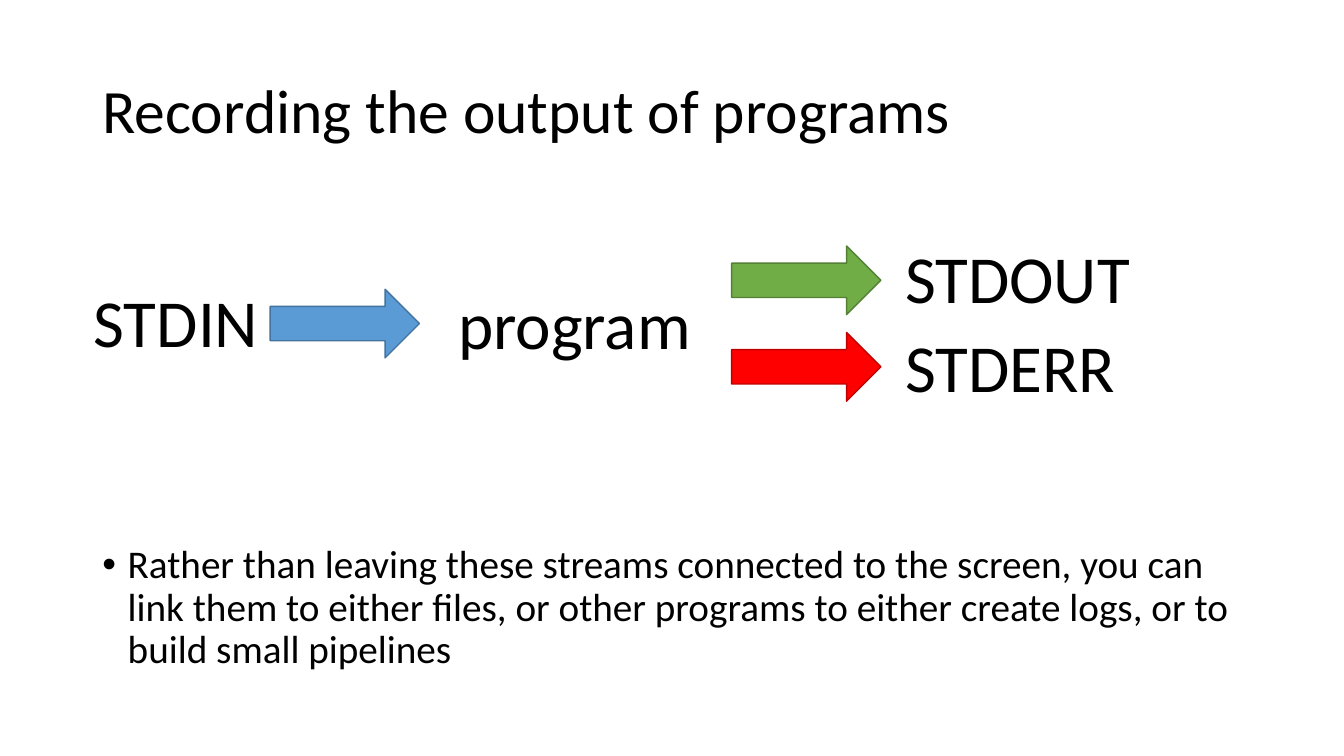
"""Builds a slide showing the standard streams flowing into and out of a program."""
from dataclasses import dataclass

from lxml import etree
from pptx import Presentation
from pptx.dml.color import RGBColor
from pptx.enum.shapes import MSO_SHAPE
from pptx.enum.text import MSO_ANCHOR, MSO_AUTO_SIZE
from pptx.oxml.ns import qn
from pptx.shapes.shapetree import GroupShapes, SlideShapes
from pptx.text.text import _Paragraph
from pptx.util import Cm, Pt

RIGHT_ARROW = MSO_SHAPE.RIGHT_ARROW
MIDDLE = MSO_ANCHOR.MIDDLE
TOP = MSO_ANCHOR.TOP
FIT_SHAPE = MSO_AUTO_SIZE.SHAPE_TO_FIT_TEXT
NO_FIT = MSO_AUTO_SIZE.NONE


@dataclass(frozen=True)
class Theme:
    font: str = "Calibri"
    ink: str = "000000"
    background: str = "FFFFFF"
    input_fill: str = "5B9BD5"
    input_line: str = "43739E"
    output_fill: str = "70AD47"
    output_line: str = "538035"
    error_fill: str = "FF0000"
    error_line: str = "C00000"
    title_size: int = 44
    body_size: int = 28
    label_size: int = 48
    outline: int = 1


@dataclass(frozen=True)
class Label:
    text: str
    left: float
    top: float
    width: float


@dataclass(frozen=True)
class Arrow:
    left: float
    top: float
    fill: str
    line: str


THEME = Theme()
MARGIN, CONTENT_WIDTH = 2.33, 29.21
LABEL_HEIGHT = 2.31
ARROW_WIDTH, ARROW_HEIGHT = 3.76, 1.73
OUTPUT_ARROW_LEFT, OUTPUT_LABEL_LEFT = 18.44, 22.56

TITLE = "Recording the output of programs"
ADVICE = (
    "Rather than leaving these streams connected to the screen, you can link them "
    "to either files, or other programs to either create logs, or to build small pipelines"
)
LABELS = (
    Label("program", 11.3, 6.99, 6.45),
    Label("STDIN", 2.11, 6.93, 4.7),
    Label("STDOUT", OUTPUT_LABEL_LEFT, 5.82, 6.22),
    Label("STDERR", OUTPUT_LABEL_LEFT, 8.08, 5.87),
)
ARROWS = (
    Arrow(6.81, 7.29, THEME.input_fill, THEME.input_line),
    Arrow(OUTPUT_ARROW_LEFT, 8.38, THEME.error_fill, THEME.error_line),
    Arrow(OUTPUT_ARROW_LEFT, 6.2, THEME.output_fill, THEME.output_line),
)


def add_text(shapes: SlideShapes | GroupShapes, label: Label, height: float, size: int,
             wrap: bool, anchor: MSO_ANCHOR = TOP) -> _Paragraph:
    box = shapes.add_textbox(Cm(label.left), Cm(label.top), Cm(label.width), Cm(height))
    frame = box.text_frame
    frame.word_wrap = wrap
    frame.auto_size = NO_FIT if wrap else FIT_SHAPE
    frame.vertical_anchor = anchor
    paragraph = frame.paragraphs[0]
    paragraph.text = label.text
    paragraph.font.name = THEME.font
    paragraph.font.size = Pt(size)
    paragraph.font.color.rgb = RGBColor.from_string(THEME.ink)
    return paragraph


def add_bullet(paragraph: _Paragraph, indent: float) -> None:
    properties = paragraph._p.get_or_add_pPr()
    properties.set("marL", str(Cm(indent)))
    properties.set("indent", str(-Cm(indent)))
    etree.SubElement(properties, qn("a:buFont"), typeface="Arial")
    etree.SubElement(properties, qn("a:buChar"), char="•")
    default_font = properties.find(qn("a:defRPr"))
    if default_font is not None:
        properties.append(default_font)


def add_arrow(shapes: GroupShapes, arrow: Arrow) -> None:
    stream = shapes.add_shape(RIGHT_ARROW, Cm(arrow.left), Cm(arrow.top),
                              Cm(ARROW_WIDTH), Cm(ARROW_HEIGHT))
    stream.shadow.inherit = False
    stream.fill.solid()
    stream.fill.fore_color.rgb = RGBColor.from_string(arrow.fill)
    stream.line.color.rgb = RGBColor.from_string(arrow.line)
    stream.line.width = Pt(THEME.outline)


def main() -> None:
    deck = Presentation()
    deck.slide_width, deck.slide_height = Cm(33.87), Cm(19.05)
    slide = deck.slides.add_slide(deck.slide_layouts[6])
    slide.background.fill.solid()
    slide.background.fill.fore_color.rgb = RGBColor.from_string(THEME.background)

    title = add_text(slide.shapes, Label(TITLE, MARGIN, 1.01, CONTENT_WIDTH), 3.68,
                     THEME.title_size, wrap=True, anchor=MIDDLE)
    title.line_spacing = 0.9
    advice = add_text(slide.shapes, Label(ADVICE, MARGIN, 13.61, CONTENT_WIDTH), 4.42,
                      THEME.body_size, wrap=True)
    advice.line_spacing = 0.9
    advice.space_before = Pt(10)
    add_bullet(advice, 0.64)

    diagram = slide.shapes.add_group_shape().shapes
    for arrow in ARROWS:
        add_arrow(diagram, arrow)
    for label in LABELS:
        add_text(diagram, label, LABEL_HEIGHT, THEME.label_size, wrap=False)

    deck.save("out.pptx")


if __name__ == "__main__":
    main()
